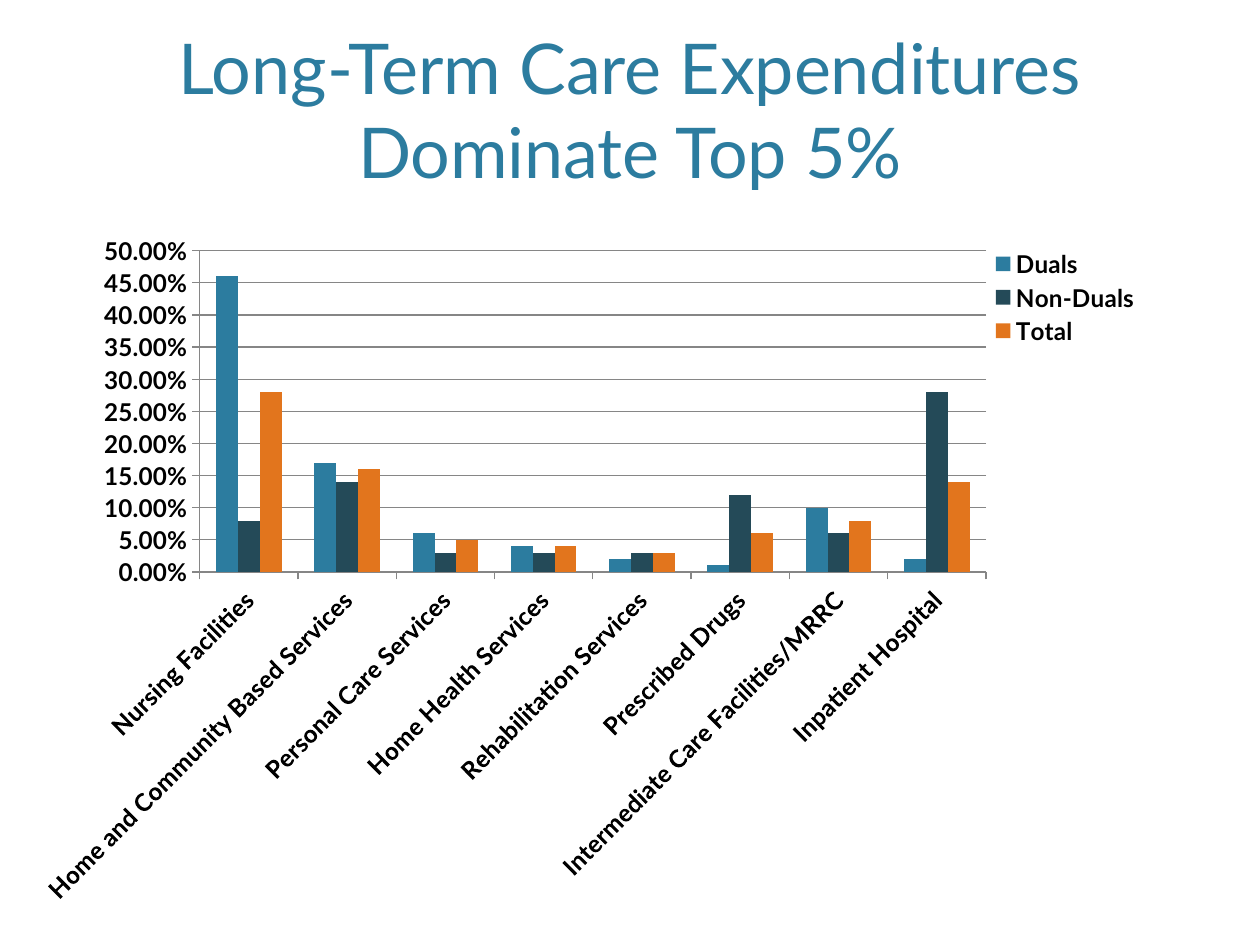
import pptx
import pptx.chart.data
import pptx.dml.color
import pptx.enum.chart
import pptx.enum.text
import pptx.oxml
import pptx.oxml.ns
import pptx.util
from pptx.util import Inches

HEADING = "Long-Term Care Expenditures Dominate Top 5%"
SERVICES = [
    "Nursing Facilities",
    "Home and Community Based Services",
    "Personal Care Services",
    "Home Health Services",
    "Rehabilitation Services",
    "Prescribed Drugs",
    "Intermediate Care Facilities/MRRC",
    "Inpatient Hospital",
]
GROUPS = [
    ("Duals", "2C7C9F", [0.46, 0.17, 0.06, 0.04, 0.02, 0.01, 0.1, 0.02]),
    ("Non-Duals", "244A58", [0.08, 0.14, 0.03, 0.03, 0.03, 0.12, 0.06, 0.28]),
    ("Total", "E2751D", [0.28, 0.16, 0.05, 0.04, 0.03, 0.06, 0.08, 0.14]),
]
HEADING_BOX = (0.6, 0.12, 8.8, 1.46)
EXPENDITURES_BOX = (0.33, 1.55, 8.92, 5.67)
PLOT_BOX = (1.5, 1.99, 6.31, 2.55)
LEGEND_BOX = (7.82, 1.95, 1.25, 0.82)
GRID_COLOR = "868686"
HEADING_FONT = {"name": "Lato", "size": pptx.util.Pt(40)}
BASE_FONT = {"name": "Lato", "size": pptx.util.Pt(10)}
LABEL_FONT = {"name": "Lato", "size": pptx.util.Pt(14), "bold": True}


def rgb(value):
    return pptx.dml.color.RGBColor.from_string(value)


def apply(target, values):
    for name, value in values.items():
        setattr(target, name, value)


def style_font(font, values, color="000000"):
    apply(font, values)
    font.color.rgb = rgb(color)


def set_layout(parent, box, index, inner=False):
    for old in parent.findall(pptx.oxml.ns.qn("c:layout")):
        parent.remove(old)
    chart_left, chart_top, chart_width, chart_height = EXPENDITURES_BOX
    left, top, width, height = box
    fractions = {
        "x": (left - chart_left) / chart_width,
        "y": (top - chart_top) / chart_height,
        "w": width / chart_width,
        "h": height / chart_height,
    }
    target = '<c:layoutTarget val="inner"/>' if inner else ""
    modes = "".join(f'<c:{side}Mode val="edge"/>' for side in "xy")
    sizes = "".join(f'<c:{side} val="{value:.4f}"/>' for side, value in fractions.items())
    parent.insert(index, pptx.oxml.parse_xml(
        f'<c:layout {pptx.oxml.ns.nsdecls("c")}><c:manualLayout>'
        f"{target}{modes}{sizes}</c:manualLayout></c:layout>"))


def add_heading(slide):
    frame = slide.shapes.add_textbox(*map(Inches, HEADING_BOX)).text_frame
    apply(frame, {"word_wrap": True, "vertical_anchor": pptx.enum.text.MSO_ANCHOR.BOTTOM})
    paragraph = frame.paragraphs[0]
    paragraph.alignment = pptx.enum.text.PP_ALIGN.CENTER
    run = paragraph.add_run()
    run.text = HEADING
    style_font(run.font, HEADING_FONT, "2C7C9F")


def add_expenditures(slide):
    data = pptx.chart.data.CategoryChartData(number_format="0.00%")
    data.categories = SERVICES
    for name, _, shares in GROUPS:
        data.add_series(name, shares)
    chart = slide.shapes.add_chart(
        pptx.enum.chart.XL_CHART_TYPE.COLUMN_CLUSTERED,
        *map(Inches, EXPENDITURES_BOX), data).chart
    apply(chart, {"has_title": False, "has_legend": True})
    style_font(chart.font, BASE_FONT)

    plot = chart.plots[0]
    apply(plot, {"gap_width": 150, "overlap": 0, "vary_by_categories": False})
    for series, (_, color, _) in zip(plot.series, GROUPS):
        series.format.fill.solid()
        series.format.fill.fore_color.rgb = rgb(color)

    service_axis, share_axis = chart.category_axis, chart.value_axis
    apply(share_axis, {"minimum_scale": 0, "maximum_scale": 0.5, "major_unit": 0.05,
                       "has_major_gridlines": True})
    apply(share_axis.tick_labels, {"number_format": "0.00%", "number_format_is_linked": False})
    for axis in (service_axis, share_axis):
        axis.major_tick_mark = pptx.enum.chart.XL_TICK_MARK.OUTSIDE
        style_font(axis.tick_labels.font, LABEL_FONT)
    for line in (service_axis.format.line, share_axis.format.line,
                 share_axis.major_gridlines.format.line):
        line.color.rgb = rgb(GRID_COLOR)
        line.width = pptx.util.Pt(0.75)
    service_axis._element.txPr.bodyPr.set("rot", str(-45 * 60000))

    legend = chart.legend
    apply(legend, {"position": pptx.enum.chart.XL_LEGEND_POSITION.RIGHT,
                   "include_in_layout": False})
    style_font(legend.font, LABEL_FONT)
    set_layout(plot._element.getparent(), PLOT_BOX, 0, inner=True)
    set_layout(legend._element, LEGEND_BOX, 1)


def main():
    deck = pptx.Presentation()
    apply(deck, {"slide_width": Inches(10), "slide_height": Inches(7.5)})
    slide = deck.slides.add_slide(deck.slide_layouts[6])
    add_heading(slide)
    add_expenditures(slide)
    deck.save("out.pptx")


if __name__ == "__main__":
    main()
